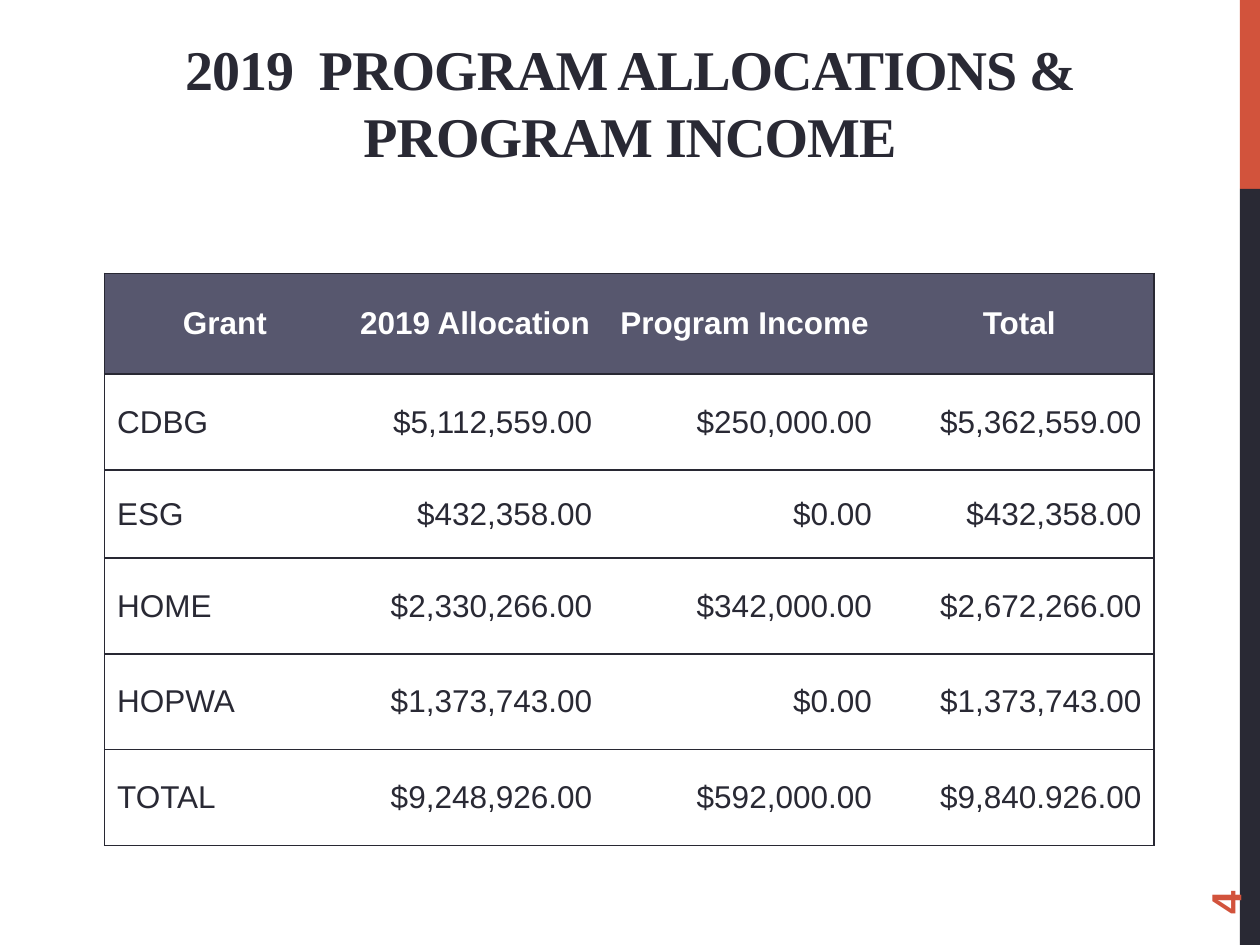
"""Build the 2019 program allocations slide."""
from dataclasses import dataclass

from lxml.etree import SubElement as Sub
from pptx import Presentation
from pptx.dml.color import RGBColor as Rgb
from pptx.enum.shapes import MSO_SHAPE as Kind
from pptx.enum.text import MSO_ANCHOR as Anchor, PP_ALIGN as Align
from pptx.oxml.ns import qn
from pptx.util import Inches, Pt

COLORS = {
    "red": "D2533C",
    "dark": "292934",
    "line": "282833",
    "head": "57576E",
    "white": "FFFFFF",
}
WIDTHS = [1.91, 2.06, 2.22, 2.14]
HEIGHTS = [0.8, 0.76, 0.7, 0.76, 0.76, 0.76]
ROWS = [
    ["Grant", "2019 Allocation", "Program Income", "Total"],
    ["CDBG", "$5,112,559.00", "$250,000.00", "$5,362,559.00"],
    ["ESG", "$432,358.00", "$0.00", "$432,358.00"],
    ["HOME", "$2,330,266.00", "$342,000.00", "$2,672,266.00"],
    ["HOPWA", "$1,373,743.00", "$0.00", "$1,373,743.00"],
    ["TOTAL", "$9,248,926.00", "$592,000.00", "$9,840.926.00"],
]


@dataclass
class Bar:
    top: float
    height: float
    color: str


@dataclass
class Label:
    text: str
    box: tuple[float, float, float, float]
    font: str
    size: int
    color: str
    align: Align
    anchor: Anchor
    turn: int = 0
    foot: float = 0.05
    space: int = 0


BARS = [Bar(0, 1.5, "red"), Bar(1.5, 6, "dark")]
LABELS = [
    Label("2019  PROGRAM ALLOCATIONS & PROGRAM INCOME", (0.25, 0.67, 9.5, 1.25),
          "Times New Roman", 32, "dark", Align.CENTER, Anchor.BOTTOM,
          foot=0.58, space=-60),
    Label("4", (9, 6.44, 1.44, 0.4), "Arial", 24, "red", Align.LEFT,
          Anchor.MIDDLE, turn=270),
]


def tint(name: str) -> Rgb:
    return Rgb.from_string(COLORS[name])


def style(para, font: str, size: int, color: str, bold: bool, align: Align) -> None:
    para.alignment = align
    for run in para.runs:
        run.font.name = font
        run.font.size = Pt(size)
        run.font.bold = bold
        run.font.color.rgb = tint(color)


def draw_bar(slide, bar: Bar) -> None:
    shape = slide.shapes.add_shape(
        Kind.RECTANGLE, Inches(9.84), Inches(bar.top), Inches(0.16), Inches(bar.height))
    shape.shadow.inherit = False
    shape.fill.solid()
    shape.fill.fore_color.rgb = tint(bar.color)
    shape.line.fill.background()


def draw_label(slide, label: Label) -> None:
    shape = slide.shapes.add_textbox(*map(Inches, label.box))
    shape.rotation = label.turn
    frame = shape.text_frame
    frame.word_wrap = True
    frame.vertical_anchor = label.anchor
    frame.margin_bottom = Inches(label.foot)
    frame.text = label.text
    para = frame.paragraphs[0]
    style(para, label.font, label.size, label.color, True, label.align)
    if label.space:
        para.runs[0].font._element.set("spc", str(label.space))


def draw_edges(cell, shown: str) -> None:
    props = cell._tc.get_or_add_tcPr()
    for spot, side in enumerate("LRTB"):
        edge = Sub(props, qn(f"a:ln{side}"), w=str(Pt(1)))
        props.insert(spot, edge)
        if side in shown:
            fill = Sub(edge, qn("a:solidFill"))
            Sub(fill, qn("a:srgbClr"), val=COLORS["line"])
        else:
            Sub(edge, qn("a:noFill"))


def draw_cell(cell, text: str, row: int, col: int) -> None:
    head = row == 0
    cell.vertical_anchor = Anchor.MIDDLE
    cell.text_frame.text = text
    align = Align.CENTER if head else Align.RIGHT if col else Align.LEFT
    style(cell.text_frame.paragraphs[0], "Arial", 18,
          "white" if head else "dark", head, align)
    if head:
        cell.fill.solid()
        cell.fill.fore_color.rgb = tint("head")
    else:
        cell.fill.background()
    sides = {0: "L", len(WIDTHS) - 1: "R"}
    draw_edges(cell, "TB" + sides.get(col, ""))


def draw_table(slide) -> None:
    table = slide.shapes.add_table(
        len(ROWS), len(WIDTHS), Inches(0.83), Inches(2.17),
        Inches(sum(WIDTHS)), Inches(sum(HEIGHTS))).table
    for column, width in zip(table.columns, WIDTHS):
        column.width = Inches(width)
    for line, height in zip(table.rows, HEIGHTS):
        line.height = Inches(height)
    for row, texts in enumerate(ROWS):
        for col, text in enumerate(texts):
            draw_cell(table.cell(row, col), text, row, col)


def main() -> None:
    deck = Presentation()
    deck.slide_width, deck.slide_height = Inches(10), Inches(7.5)
    slide = deck.slides.add_slide(deck.slide_layouts[6])
    for bar in BARS:
        draw_bar(slide, bar)
    title, number = LABELS
    draw_label(slide, title)
    draw_table(slide)
    draw_label(slide, number)
    deck.save("out.pptx")


if __name__ == "__main__":
    main()
